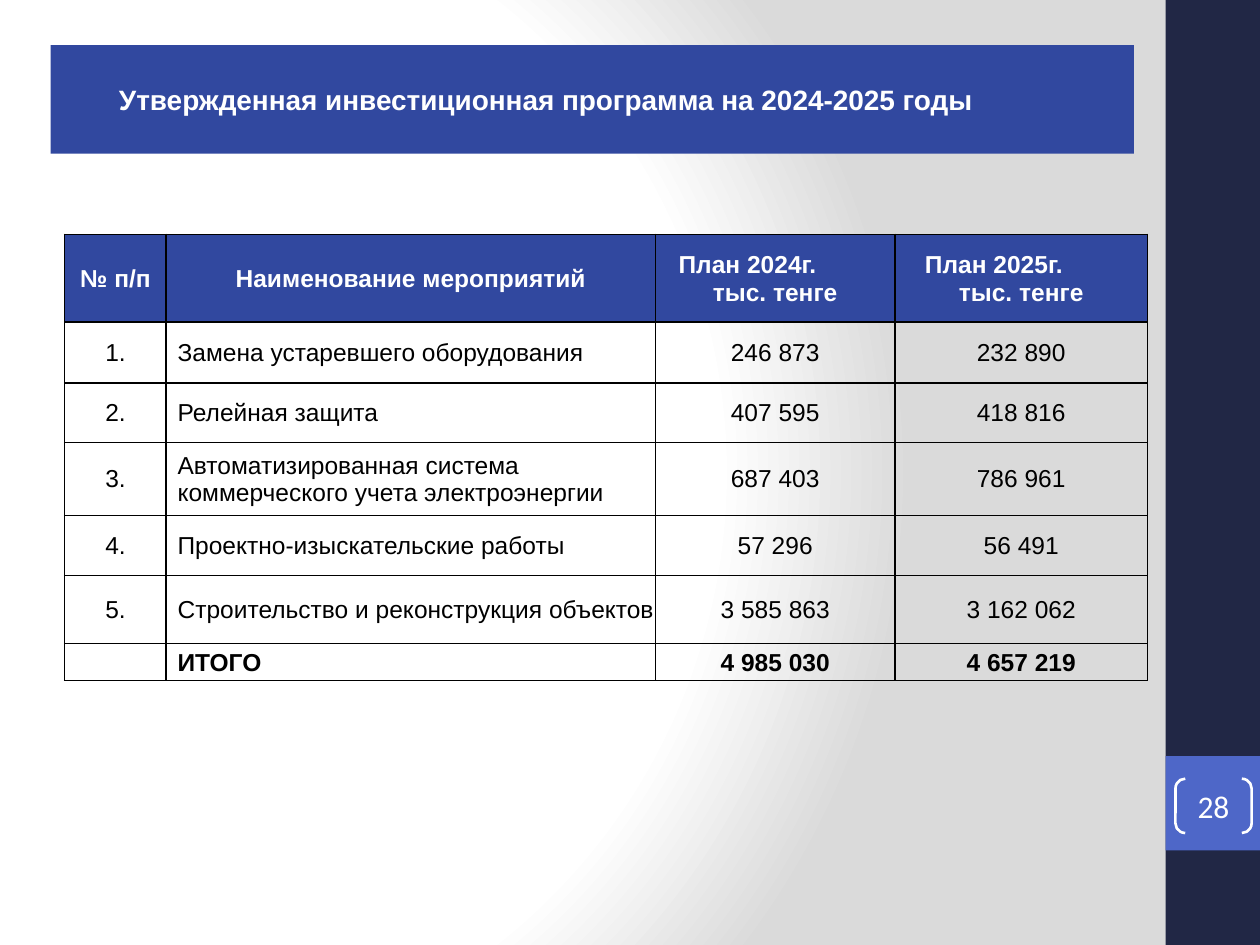
import pptx
import pptx.util
import pptx.oxml
import pptx.oxml.ns
import pptx.dml.color
import pptx.enum.shapes
import pptx.enum.text

Pt = pptx.util.Pt
MSO = pptx.enum.shapes.MSO_SHAPE
ALIGN = pptx.enum.text.PP_ALIGN
MIDDLE = pptx.enum.text.MSO_ANCHOR.MIDDLE
NS = pptx.oxml.ns.nsdecls("a")


def rgb(color):
    return pptx.dml.color.RGBColor.from_string(color)


def add_run(p, text, size, color, bold=False, font="Arial"):
    r = p.add_run()
    r.text = text
    r.font.name = font
    r.font.size = Pt(size)
    r.font.bold = bold
    r.font.color.rgb = rgb(color)


prs = pptx.Presentation()
prs.slide_width, prs.slide_height = Pt(720), Pt(540)
s = prs.slides.add_slide(prs.slide_layouts[5])

s.background.fill.solid()
bg = s.element.find(".//" + pptx.oxml.ns.qn("p:bgPr"))
stops = "".join(
    f'<a:gs pos="{pos * 1000}"><a:srgbClr val="{color}"/></a:gs>'
    for pos, color in [(0, "FFFFFF"), (75, "FFFFFF"), (100, "DADADA")]
)
bg.replace(bg[0], pptx.oxml.parse_xml(
    f'<a:gradFill {NS} rotWithShape="1"><a:gsLst>{stops}</a:gsLst><a:path path="circle">'
    '<a:fillToRect l="20000" t="50000" r="100000" b="50000"/></a:path></a:gradFill>'
))

for top, height, color in [(0, 540, "212745"), (432, 54, "4E67C8")]:
    sp = s.shapes.add_shape(MSO.RECTANGLE, Pt(666), Pt(top), Pt(54), Pt(height))
    sp.shadow.inherit = False
    sp.fill.solid()
    sp.fill.fore_color.rgb = rgb(color)
    sp.line.fill.background()

sp = s.shapes.add_shape(MSO.DOUBLE_BRACKET, Pt(671.7), Pt(445), Pt(43.5), Pt(31))
sp.shadow.inherit = False
sp.adjustments[0] = 0.18
sp.fill.background()
sp.line.color.rgb = rgb("FFFFFF")
sp.line.width = Pt(1.5)
tf = sp.text_frame
tf.margin_left = tf.margin_right = tf.margin_top = tf.margin_bottom = 0
tf.vertical_anchor = MIDDLE
p = tf.paragraphs[0]
p.alignment = ALIGN.CENTER
add_run(p, "28", 18, "FFFFFF", font="Calibri")

title = s.shapes.title
title.left, title.top, title.width, title.height = Pt(29), Pt(25.8), Pt(619), Pt(62)
title.element.spPr.append(pptx.oxml.parse_xml(
    f'<a:prstGeom {NS} prst="snip2DiagRect"><a:avLst/></a:prstGeom>'
))
title.fill.solid()
title.fill.fore_color.rgb = rgb("31489F")
tf = title.text_frame
tf.word_wrap = True
tf.auto_size = pptx.enum.text.MSO_AUTO_SIZE.NONE
tf.margin_left = tf.margin_right = Pt(5)
tf.margin_top = tf.margin_bottom = Pt(3)
tf.vertical_anchor = MIDDLE
p = tf.paragraphs[0]
p.alignment = ALIGN.LEFT
pPr = p._p.get_or_add_pPr()
pPr.set("marL", str(Pt(34)))
pPr.set("indent", "0")
add_run(p, "Утвержденная инвестиционная программа на 2024-2025 годы", 16, "FFFFFF", True)

rows = [
    ("№ п/п", "Наименование мероприятий", "План 2024г.\nтыс. тенге", "План 2025г.\nтыс. тенге"),
    ("1.", "Замена устаревшего оборудования", "246 873", "232 890"),
    ("2.", "Релейная защита", "407 595", "418 816"),
    ("3.", "Автоматизированная система коммерческого учета электроэнергии", "687 403", "786 961"),
    ("4.", "Проектно-изыскательские работы", "57 296", "56 491"),
    ("5.", "Строительство и реконструкция объектов", "3 585 863", "3 162 062"),
    ("", "ИТОГО", "4 985 030", "4 657 219"),
]
widths = [58, 279.6, 136.8, 144.4]
heights = [50, 34.8, 34, 41.7, 34.3, 38.9, 21.4]
unit_indents = {2: 12.5, 3: 16.5}

table = s.shapes.add_table(
    len(rows), len(widths), Pt(37), Pt(134), Pt(sum(widths)), Pt(sum(heights))
).table
table.first_row = table.horz_banding = False
for col, width in zip(table.columns, widths):
    col.width = Pt(width)

for i, (values, height) in enumerate(zip(rows, heights)):
    table.rows[i].height = Pt(height)
    header = i == 0
    bold = header or i == len(rows) - 1
    for j, text in enumerate(values):
        cell = table.cell(i, j)
        name = j == 1 and not header
        cell.vertical_anchor = MIDDLE
        cell.margin_left = Pt(6.5 if name else 0.7)
        cell.margin_right = cell.margin_top = Pt(0.7)
        cell.margin_bottom = 0
        tcPr = cell._tc.get_or_add_tcPr()
        for side in "LRTB":
            tcPr.append(pptx.oxml.parse_xml(
                f'<a:ln{side} {NS} w="{Pt(1)}"><a:solidFill><a:srgbClr val="000000"/>'
                f'</a:solidFill></a:ln{side}>'
            ))
        if header:
            cell.fill.solid()
            cell.fill.fore_color.rgb = rgb("31489F")
        else:
            cell.fill.background()
        tf = cell.text_frame
        for k, line in enumerate(text.split("\n")):
            p = tf.add_paragraph() if k else tf.paragraphs[0]
            p.alignment = ALIGN.LEFT if name else ALIGN.CENTER
            if header and j in unit_indents and k == 0:
                p.alignment = ALIGN.LEFT
                p._p.get_or_add_pPr().set("marL", str(Pt(unit_indents[j])))
            add_run(p, line, 14, "FFFFFF" if header else "000000", bold)

prs.save("out.pptx")
